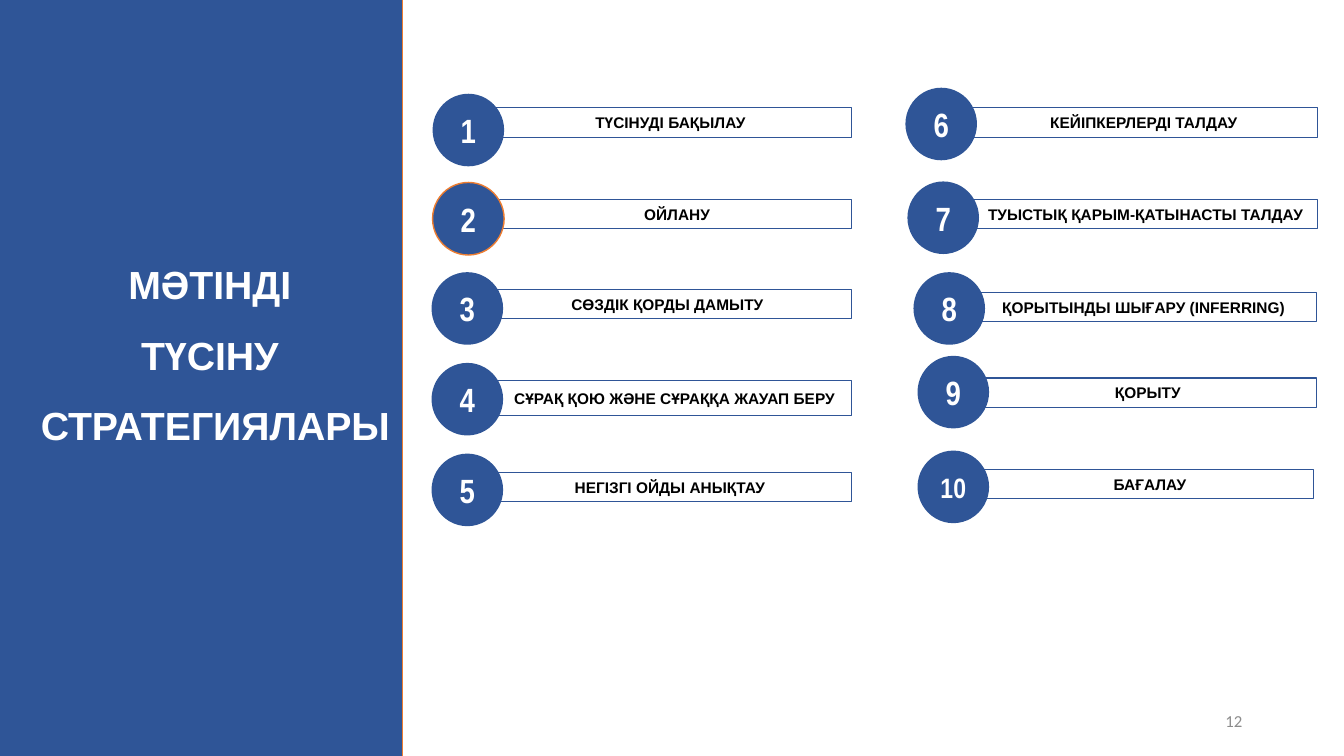
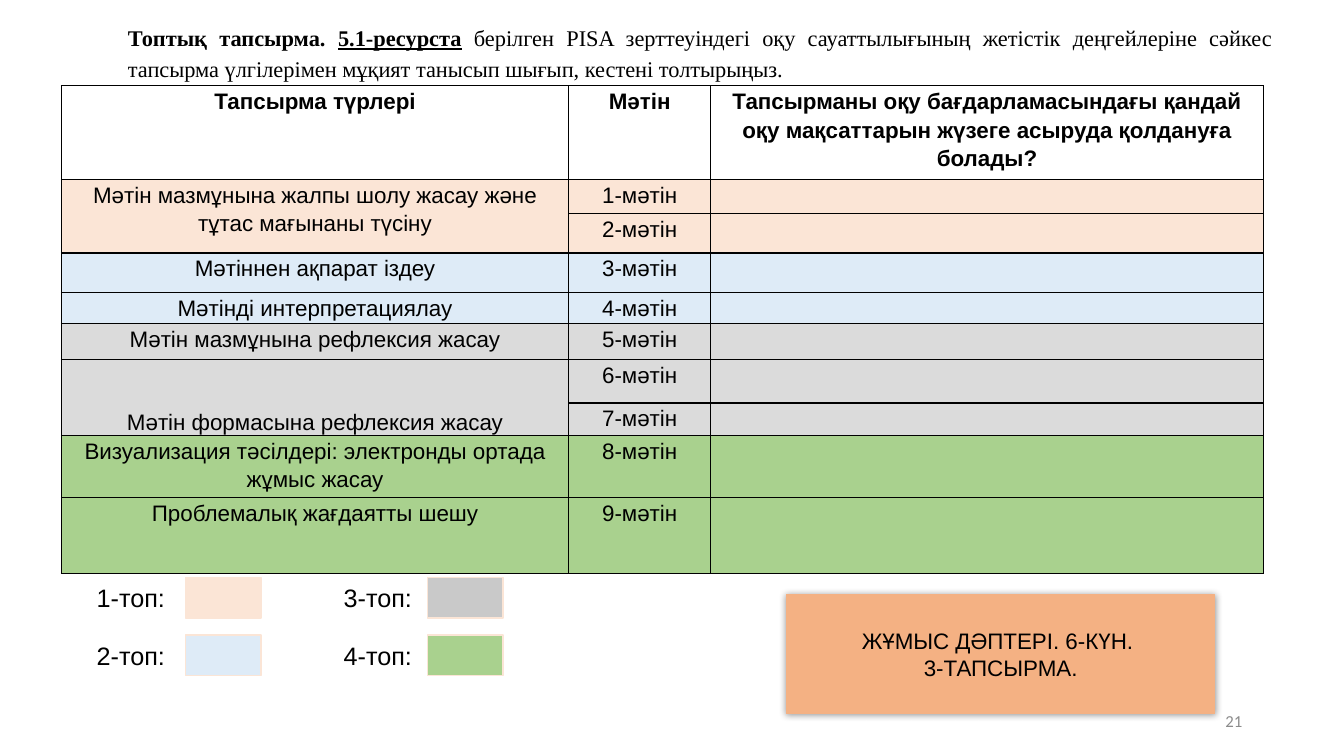
from lxml.etree import SubElement as Sub
from pptx import Presentation
from pptx.dml.color import RGBColor as RGB
from pptx.enum.shapes import MSO_SHAPE as Kind
from pptx.enum.text import MSO_ANCHOR as Anc, PP_ALIGN as Al
from pptx.oxml.ns import qn
from pptx.util import Emu, Pt

INK = {
    "blue": "2F5597", "rim": "ED7D31", "white": "FFFFFF", "black": "000000",
    "note": "8C8C8C", "peach": "FBE5D6", "sky": "DEEBF7", "ash": "DBDBDB",
    "grey": "C9C9C9", "leaf": "A9D18E", "warm": "F4B183",
}

# Slide 1: label, bar (left, top, width), disc (left, top), left inset, align
TITLE = ["МӘТІНДІ ", "ТҮСІНУ ", "СТРАТЕГИЯЛАРЫ"]
STEPS = [
    ("ТҮСІНУДІ БАҚЫЛАУ", (479, 107, 366), (429, 93), 16, Al.CENTER),
    ("ОЙЛАНУ", (490, 198, 355), (429, 181), 18, Al.CENTER),
    ("СӨЗДІК ҚОРДЫ ДАМЫТУ", (479, 287, 366), (428, 270), 10, Al.CENTER),
    ("СҰРАҚ ҚОЮ ЖӘНЕ СҰРАҚҚА ЖАУАП БЕРУ", (490, 378, 355), (428, 360), 20, Al.LEFT),
    ("НЕГІЗГІ ОЙДЫ АНЫҚТАУ", (484, 469, 361), (428, 450), 10, Al.CENTER),
    ("КЕЙІПКЕРЛЕРДІ ТАЛДАУ", (962, 107, 345), (898, 87), 10, Al.CENTER),
    ("ТУЫСТЫҚ ҚАРЫМ-ҚАТЫНАСТЫ ТАЛДАУ", (962, 198, 345), (900, 180), 18, Al.LEFT),
    ("ҚОРЫТЫНДЫ ШЫҒАРУ (INFERRING)", (971, 290, 335), (906, 270), 23, Al.LEFT),
    ("ҚОРЫТУ", (971, 375, 335), (910, 353), 10, Al.CENTER),
    ("БАҒАЛАУ", (974, 466, 329), (910, 447), 14, Al.CENTER),
]
RIMMED, TALL = 2, 4  # steps with a rimmed disc and with a taller bar

# Slide 2
TASK = [
    ("Топтық тапсырма. ", {"bold": True}),
    ("5.1-ресурста", {"bold": True, "under": True}),
    (" берілген PISA зерттеуіндегі оқу сауаттылығының жетістік деңгейлеріне "
     "сәйкес тапсырма үлгілерімен мұқият танысып шығып, кестені толтырыңыз.", {}),
]
HEAD = ["Тапсырма түрлері", "Мәтін",
        "Тапсырманы оқу бағдарламасындағы қандай оқу мақсаттарын жүзеге "
        "асыруда қолдануға болады?"]
# Task, number of texts, fill, anchor
KINDS = [
    ("Мәтін мазмұнына жалпы шолу жасау және тұтас мағынаны түсіну", 2, "peach", Anc.TOP),
    ("Мәтіннен ақпарат іздеу", 1, "sky", Anc.TOP),
    ("Мәтінді интерпретациялау", 1, "sky", Anc.TOP),
    ("Мәтін мазмұнына рефлексия жасау", 1, "ash", Anc.TOP),
    ("Мәтін формасына рефлексия жасау", 2, "ash", Anc.BOTTOM),
    ("Визуализация тәсілдері: электронды ортада жұмыс жасау", 1, "leaf", Anc.TOP),
    ("Проблемалық жағдаятты шешу", 1, "leaf", Anc.TOP),
]
COLS = [503, 141, 548]
ROWS = [93, 34, 39, 39, 31, 36, 43, 32, 62, 75]
TEAMS = ["peach", "sky", "grey", "leaf"]
CALL = ["ЖҰМЫС ДӘПТЕРІ. 6-КҮН. ", "3-ТАПСЫРМА."]


def px(num):
    return Emu(num * 9144)


def tint(name):
    return RGB.from_string(INK[name])


def write(frame, paras, size, font="Arial", ink="black", bold=False,
          align=Al.LEFT, anchor=Anc.TOP, gap=None, wrap=True):
    """Fill a text frame; a paragraph is a string or a list of (text, style)."""
    frame.word_wrap = wrap
    frame.vertical_anchor = anchor
    for i, runs in enumerate(paras):
        para = frame.add_paragraph() if i else frame.paragraphs[0]
        para.alignment = align
        if gap:
            para.line_spacing = gap
        if isinstance(runs, str):
            runs = [(runs, {})]
        for words, look in runs:
            run = para.add_run()
            run.text = words
            run.font.name, run.font.size = font, Pt(size)
            run.font.bold = look.get("bold", bold)
            run.font.underline = look.get("under", False)
            run.font.color.rgb = tint(ink)


def label(slide, box, paras, size, **look):
    frame = slide.shapes.add_textbox(*map(px, box)).text_frame
    write(frame, paras, size, **look)


def shape(slide, box, fill=None, line=None, width=1, kind=Kind.RECTANGLE):
    item = slide.shapes.add_shape(kind, *map(px, box))
    item.shadow.inherit = False
    if fill:
        item.fill.solid()
        item.fill.fore_color.rgb = tint(fill)
    else:
        item.fill.background()
    if line:
        item.line.color.rgb = tint(line)
        item.line.width = Pt(width)
    else:
        item.line.fill.background()
    return item


def inset(part, left, top, right, low):
    part.margin_left, part.margin_top = px(left), px(top)
    part.margin_right, part.margin_bottom = px(right), px(low)


def glow(item):
    """Soft shadow on all sides."""
    list_ = item._element.spPr.find(qn("a:effectLst"))
    cast = Sub(list_, qn("a:outerShdw"), blurRad=str(Pt(5)), dist="0", dir="0",
               algn="ctr", rotWithShape="0")
    hue = Sub(cast, qn("a:srgbClr"), val=INK["black"])
    Sub(hue, qn("a:alpha"), val="40000")


def cell_box(cell, fill=None):
    """Thin black borders, small margins and a fill."""
    inset(cell, 4, 0, 4, 0)
    props = cell._tc.get_or_add_tcPr()
    for side in "LRTB":
        edge = Sub(props, qn("a:ln" + side), w=str(Pt(1)))
        Sub(Sub(edge, qn("a:solidFill")), qn("a:srgbClr"), val=INK["black"])
    if fill:
        cell.fill.solid()
        cell.fill.fore_color.rgb = tint(fill)
    else:
        cell.fill.background()


def page(deck, num):
    slide = deck.slides.add_slide(deck.slide_layouts[6])
    label(slide, (942, 695, 300, 40), [num], 12, font="Calibri", ink="note",
          align=Al.RIGHT, anchor=Anc.MIDDLE)
    return slide


def steps(deck):
    slide = page(deck, "12")
    # Bars
    for num, (words, (x, y, wide), _, left, align) in enumerate(STEPS, 1):
        bar = shape(slide, (x, y, wide, 34 if num == TALL else 29), None, "blue", 0.75)
        inset(bar.text_frame, left, 0, 10, 0)
        write(bar.text_frame, [words], 11, bold=True, align=align, anchor=Anc.MIDDLE)
    # Side panel with the title
    shape(slide, (-2, -4, 401, 770), "blue", "rim", 0.5)
    label(slide, (27, 230, 373, 213), TITLE, 28, ink="white", bold=True,
          align=Al.CENTER, gap=1.5)
    # Numbered discs
    for num, step in enumerate(STEPS, 1):
        disc = shape(slide, (*step[2], 71, 72), "blue",
                     "rim" if num == RIMMED else None, kind=Kind.OVAL)
        inset(disc.text_frame, 0, 0, 0, 0)
        write(disc.text_frame, [str(num)], 24 if num < 10 else 20, "Arial Narrow",
              "white", True, Al.CENTER, Anc.MIDDLE)


def tasks(deck):
    slide = page(deck, "21")
    label(slide, (117, 15, 1155, 70), [TASK], 16, font="Times New Roman",
          align=Al.JUSTIFY, gap=1.15)
    # Table
    box = (61, 85, sum(COLS), sum(ROWS))
    grid = slide.shapes.add_table(len(ROWS), len(COLS), *map(px, box)).table
    grid.first_row = grid.horz_banding = False
    for col, wide in zip(grid.columns, COLS):
        col.width = px(wide)
    for row, high in zip(grid.rows, ROWS):
        row.height = px(high)
    look = {"align": Al.CENTER, "gap": 1.15}
    for c, words in enumerate(HEAD):
        cell_box(grid.cell(0, c))
        write(grid.cell(0, c).text_frame, [words], 16, bold=True, **look)
    row = 1
    for words, count, fill, anchor in KINDS:
        first = grid.cell(row, 0)
        for r in range(row, row + count):
            for c in range(len(COLS)):
                cell_box(grid.cell(r, c), fill)
            write(grid.cell(r, 1).text_frame, [f"{r}-мәтін"], 16, **look)
        if count > 1:
            first.merge(grid.cell(row + count - 1, 0))
        write(first.text_frame, [words], 16, **look)
        first.vertical_anchor = anchor
        row += count
    # Team legend, two by two
    for i, fill in enumerate(TEAMS):
        x, y = 86 + i // 2 * 240, 573 + i % 2 * 57
        label(slide, (x + i // 2 * 5, y, 89, 40), [f"{i + 1}-топ:"], 18, wrap=False)
        shape(slide, (x + 98, y, 75, 40), fill, "peach")
    # Workbook note
    note = shape(slide, (780, 590, 425, 118), "warm", "warm", 0.75)
    glow(note)
    write(note.text_frame, CALL, 16, align=Al.CENTER, anchor=Anc.MIDDLE)


def main():
    deck = Presentation()
    deck.slide_width, deck.slide_height = px(1333), px(750)
    steps(deck)
    tasks(deck)
    deck.save("out.pptx")


if __name__ == "__main__":
    main()
